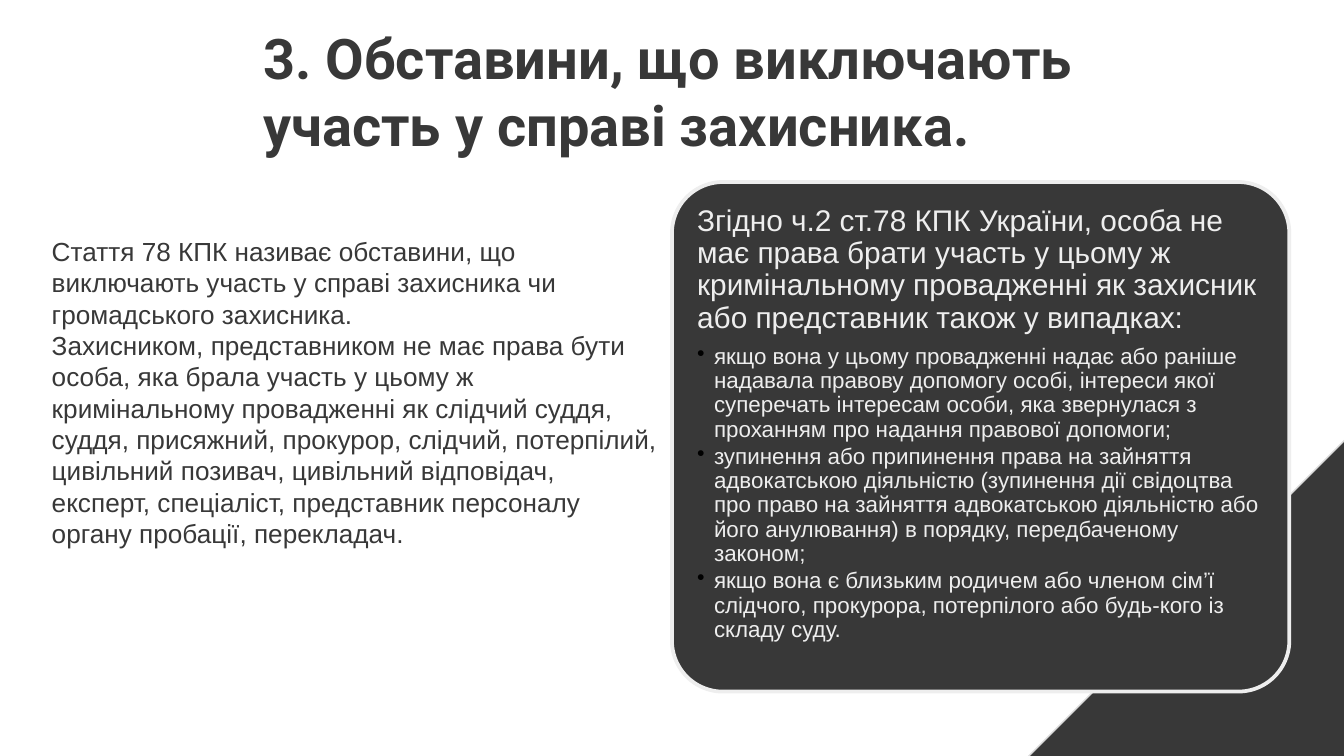
from lxml.etree import SubElement
from pptx import Presentation
from pptx.dml.color import RGBColor
from pptx.enum.shapes import MSO_SHAPE
from pptx.enum.text import MSO_ANCHOR, PP_ALIGN
from pptx.oxml.ns import qn
from pptx.util import Emu, Pt

PX = 9525
COLORS = {"dark": "383838", "light": "EEEEEE", "edge": "DBDBDB", "bullet": "000000"}

TITLE = "3. Обставини, що виключають участь у справі захисника."
ARTICLE = [
    "Стаття 78 КПК називає обставини, що виключають участь у справі захисника чи "
    "громадського захисника.",
    "Захисником, представником не має права бути особа, яка брала участь у цьому ж "
    "кримінальному провадженні як слідчий суддя, суддя, присяжний, прокурор, слідчий, "
    "потерпілий, цивільний позивач, цивільний відповідач, експерт, спеціаліст, "
    "представник персоналу органу пробації, перекладач.",
]
CARD_HEADING = (
    "Згідно ч.2 ст.78 КПК України, особа не має права брати участь у цьому ж "
    "кримінальному провадженні як захисник або представник також у випадках:"
)
CARD_CASES = [
    "якщо вона у цьому провадженні надає або раніше надавала правову допомогу особі, "
    "інтереси якої суперечать інтересам особи, яка звернулася з проханням про надання "
    "правової допомоги;",
    "зупинення або припинення права на зайняття адвокатською діяльністю (зупинення дії "
    "свідоцтва про право на зайняття адвокатською діяльністю або його анулювання) в "
    "порядку, передбаченому законом;",
    "якщо вона є близьким родичем або членом сім’ї слідчого, прокурора, потерпілого "
    "або будь-кого із складу суду.",
]


def px(value):
    return Emu(value * PX)


def color(name):
    return RGBColor.from_string(COLORS[name])


class SlideBuilder:
    def __init__(self, slide):
        self.slide = slide

    def panel(self, kind, box, line, line_width):
        shape = self.slide.shapes.add_shape(kind, *map(px, box))
        shape.shadow.inherit = False
        shape.fill.solid()
        shape.fill.fore_color.rgb = color("dark")
        shape.line.color.rgb = color(line)
        shape.line.width = Pt(line_width)
        return shape

    def text_box(self, box, inset):
        frame = self.slide.shapes.add_textbox(*map(px, box)).text_frame
        frame.word_wrap = True
        frame.vertical_anchor = MSO_ANCHOR.TOP
        frame.margin_left = frame.margin_right = px(inset)
        frame.margin_top = frame.margin_bottom = px(inset)
        return frame

    def paragraph(self, frame, text, size, ink, font="Arial", bold=False,
                  spacing=1.0, after=0, left=0, bullet=False):
        first = frame.paragraphs[0]
        paragraph = frame.add_paragraph() if first.runs else first
        paragraph.add_run().text = text
        paragraph.alignment = PP_ALIGN.LEFT
        paragraph.line_spacing = spacing
        paragraph.space_after = Pt(after)
        paragraph.font.size = Pt(size)
        paragraph.font.name = font
        paragraph.font.bold = bold
        paragraph.font.color.rgb = color(ink)
        properties = paragraph._p.get_or_add_pPr()
        properties.set("marL", str(px(left)))
        if bullet:
            self.add_bullet(properties, left)

    def add_bullet(self, properties, hang):
        """Put a bullet in front of the text, hanging by the given px."""
        properties.set("indent", str(-px(hang)))
        bullet_color = SubElement(properties, qn("a:buClr"))
        SubElement(bullet_color, qn("a:srgbClr"), val=COLORS["bullet"])
        character = SubElement(properties, qn("a:buChar"), char="•")
        default_font = properties.find(qn("a:defRPr"))
        if default_font is not None:
            default_font.addprevious(bullet_color)
            default_font.addprevious(character)


def main():
    presentation = Presentation()
    presentation.slide_width = px(960)
    presentation.slide_height = px(540)
    builder = SlideBuilder(presentation.slides.add_slide(presentation.slide_layouts[6]))

    corner = builder.panel(MSO_SHAPE.RIGHT_TRIANGLE, (610, 161, 504, 504), "edge", 0.75)
    corner._element.spPr.xfrm.set("flipH", "1")

    article = builder.text_box((13, 158, 467, 337), 10)
    for text in ARTICLE:
        builder.paragraph(article, text, 14, "dark", left=14)

    title = builder.text_box((178, 7, 606, 56), 10)
    builder.paragraph(title, TITLE, 30, "dark", font="Roboto", bold=True)

    card = builder.panel(MSO_SHAPE.ROUNDED_RECTANGLE, (480, 130, 441, 364), "light", 2)
    card.adjustments[0] = 0.1
    card_text = builder.text_box((491, 140, 420, 342), 7)
    builder.paragraph(card_text, CARD_HEADING, 16, "light", spacing=0.9, after=5.6)
    for text in CARD_CASES:
        builder.paragraph(card_text, text, 12, "light", spacing=0.9, after=1.8,
                          left=12, bullet=True)

    presentation.save("out.pptx")


if __name__ == "__main__":
    main()
